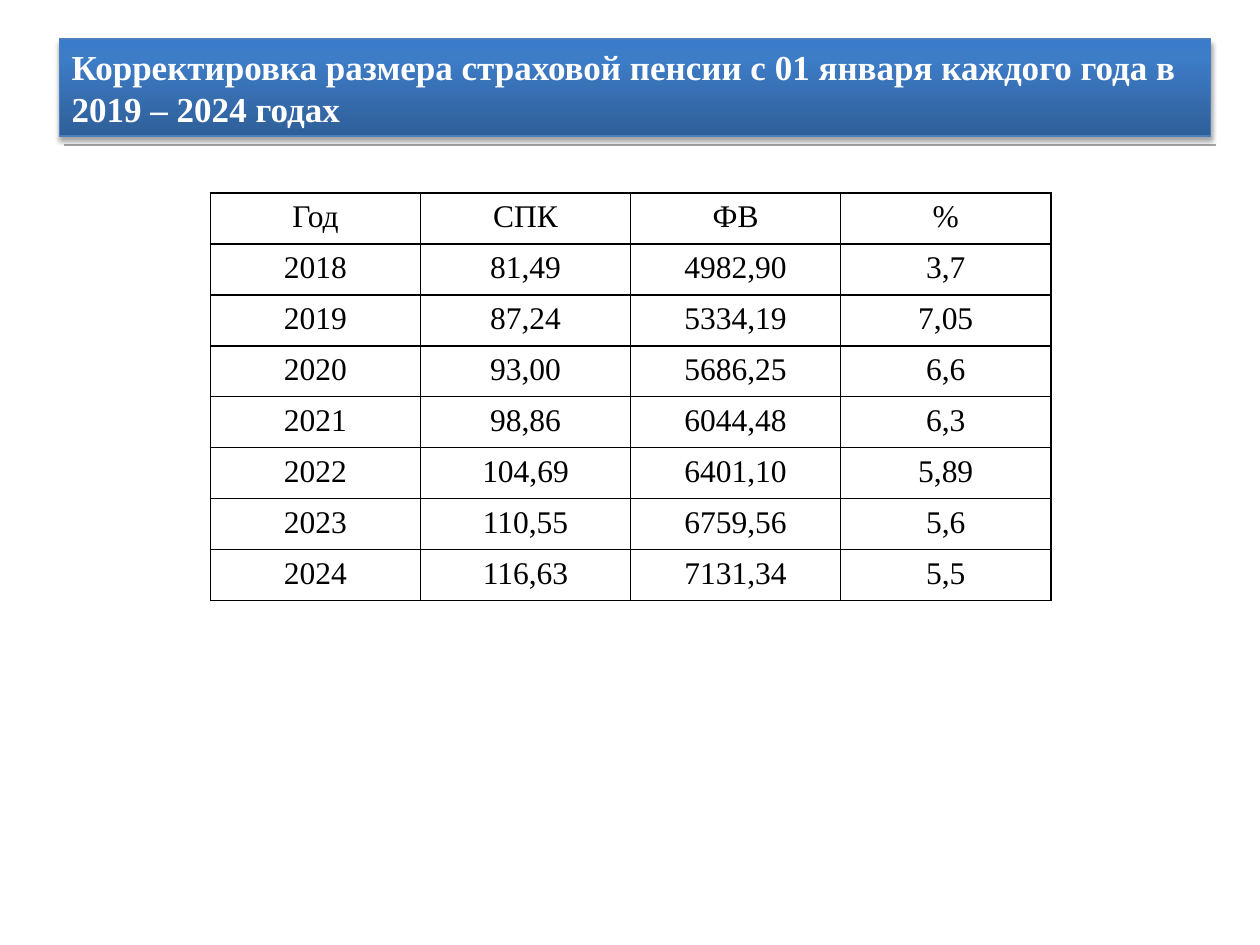
"""Build a slide on the yearly adjustment of the insurance pension."""
from lxml.etree import SubElement
from pptx import Presentation
from pptx.dml.color import RGBColor
from pptx.enum.shapes import MSO_CONNECTOR, MSO_SHAPE
from pptx.enum.text import MSO_ANCHOR, MSO_AUTO_SIZE, PP_ALIGN
from pptx.oxml import parse_xml
from pptx.oxml.ns import nsdecls, qn
from pptx.util import Inches, Pt

FONT = "Times New Roman"
TITLE = "Корректировка размера страховой пенсии с 01 января каждого года в 2019 – 2024 годах"
TITLE_GRADIENT = [(0, "2F5F99"), (80, "3D7CC7"), (100, "3A7CCB")]
PENSION_ROWS = [
    ("Год", "СПК", "ФВ", "%"),
    ("2018", "81,49", "4982,90", "3,7"),
    ("2019", "87,24", "5334,19", "7,05"),
    ("2020", "93,00", "5686,25", "6,6"),
    ("2021", "98,86", "6044,48", "6,3"),
    ("2022", "104,69", "6401,10", "5,89"),
    ("2023", "110,55", "6759,56", "5,6"),
    ("2024", "116,63", "7131,34", "5,5"),
]


def rgb(value):
    """Return the colour for a hex string."""
    return RGBColor.from_string(value)


def style_text(paragraph, size, color, align, bold=False):
    """Set the font and alignment of a paragraph."""
    paragraph.alignment = align
    paragraph.font.name = FONT
    paragraph.font.size = Pt(size)
    paragraph.font.bold = bold
    paragraph.font.color.rgb = rgb(color)


def add_rule(slide, left, right, top, color, width):
    """Draw a horizontal line without a shadow."""
    rule = slide.shapes.add_connector(
        MSO_CONNECTOR.STRAIGHT, Inches(left), Inches(top), Inches(right), Inches(top)
    )
    rule.line.color.rgb = rgb(color)
    rule.line.width = Pt(width)
    SubElement(rule._element.spPr, qn("a:effectLst"))


def fill_gradient(shape, stops):
    """Fill a shape with a gradient that runs from bottom to top."""
    stop_xml = "".join(
        f'<a:gs pos="{position * 1000}"><a:srgbClr val="{color}"/></a:gs>'
        for position, color in stops
    )
    shape._element.spPr.append(parse_xml(
        f'<a:gradFill {nsdecls("a")} rotWithShape="1"><a:gsLst>{stop_xml}</a:gsLst>'
        '<a:lin ang="16200000" scaled="0"/></a:gradFill>'
    ))


def add_drop_shadow(shape, color, opacity, blur, distance):
    """Give a shape a soft shadow straight below it."""
    shape.shadow.inherit = False
    shape._element.spPr.find(qn("a:effectLst")).append(parse_xml(
        f'<a:outerShdw {nsdecls("a")} blurRad="{Pt(blur)}" dist="{Pt(distance)}" '
        f'dir="5400000" rotWithShape="0"><a:srgbClr val="{color}">'
        f'<a:alpha val="{opacity * 1000}"/></a:srgbClr></a:outerShdw>'
    ))


def add_title_banner(slide, text, left, top, width, height):
    """Add the gradient banner that holds the title."""
    banner = slide.shapes.add_shape(
        MSO_SHAPE.RECTANGLE, Inches(left), Inches(top), Inches(width), Inches(height)
    )
    fill_gradient(banner, TITLE_GRADIENT)
    banner.line.color.rgb = rgb("4B7EBC")
    banner.line.width = Pt(0.75)
    add_drop_shadow(banner, "000000", 35, 3.1, 1.8)
    frame = banner.text_frame
    frame.word_wrap = True
    frame.auto_size = MSO_AUTO_SIZE.SHAPE_TO_FIT_TEXT
    frame.vertical_anchor = MSO_ANCHOR.TOP
    frame.text = text
    style_text(frame.paragraphs[0], 20, "FFFFFF", PP_ALIGN.LEFT, bold=True)


def add_borders(cell, color, width):
    """Draw all four borders of a table cell."""
    properties = cell._tc.get_or_add_tcPr()
    for side in ("lnL", "lnR", "lnT", "lnB"):
        properties.append(parse_xml(
            f'<a:{side} {nsdecls("a")} w="{Pt(width)}"><a:solidFill>'
            f'<a:srgbClr val="{color}"/></a:solidFill></a:{side}>'
        ))


def add_pension_table(slide, rows, left, top, width, height):
    """Add the table of pension values by year."""
    table = slide.shapes.add_table(
        len(rows), len(rows[0]), Inches(left), Inches(top), Inches(width), Inches(height)
    ).table
    table.first_row = False
    table.horz_banding = False
    for row, values in zip(table.rows, rows):
        for cell, value in zip(row.cells, values):
            add_borders(cell, "000000", 1)
            cell.fill.background()
            cell.text = value
            style_text(cell.text_frame.paragraphs[0], 18, "000000", PP_ALIGN.CENTER)


def main():
    """Build and save the presentation."""
    presentation = Presentation()
    presentation.slide_width = Inches(10)
    presentation.slide_height = Inches(7.5)
    slide = presentation.slides.add_slide(presentation.slide_layouts[6])
    add_rule(slide, 0.51, 9.65, 1.15, "A6A6A6", 1.5)
    add_title_banner(slide, TITLE, 0.47, 0.31, 9.14, 0.77)
    add_pension_table(slide, PENSION_ROWS, 1.67, 1.53, 6.67, 3.24)
    presentation.save("out.pptx")


if __name__ == "__main__":
    main()
